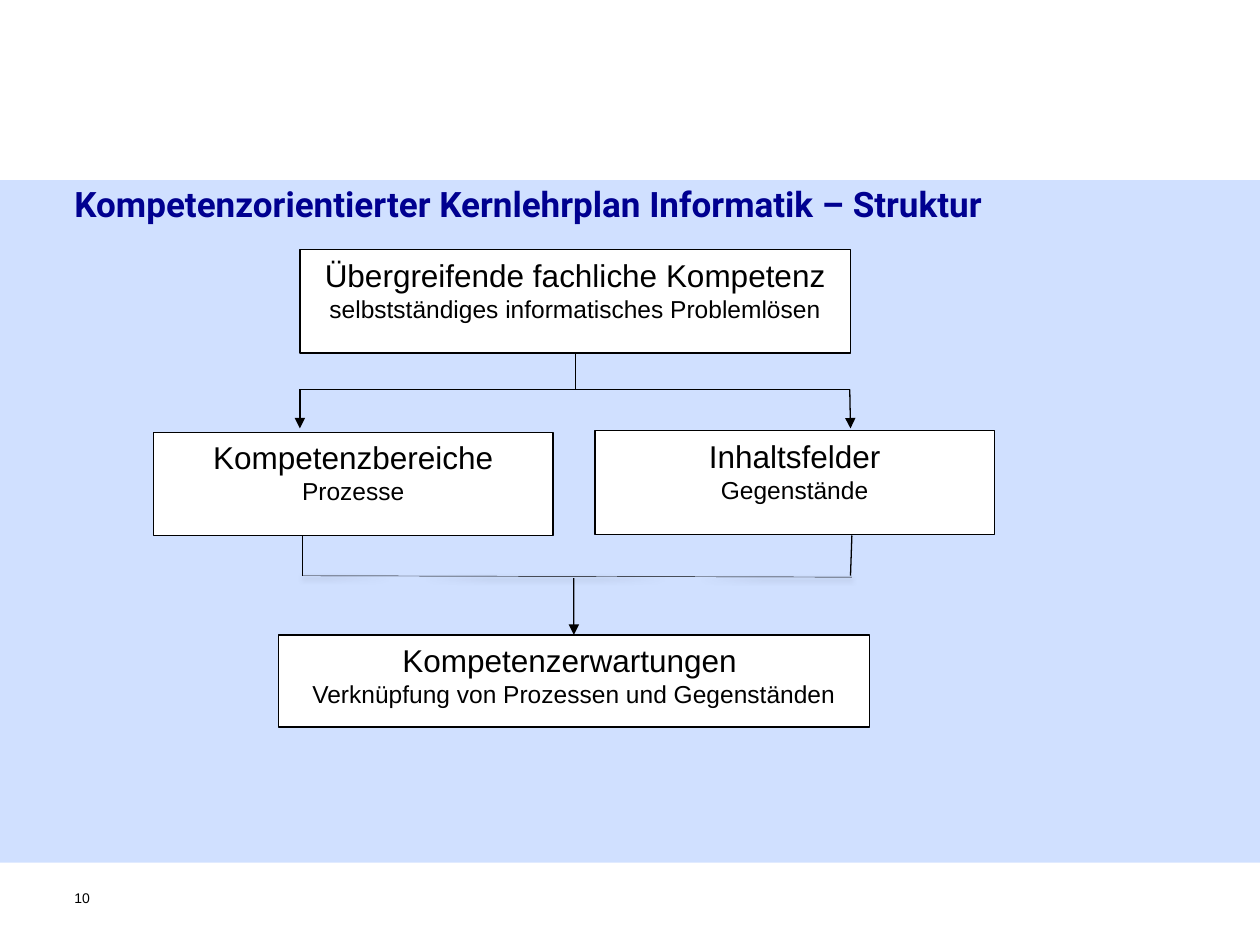
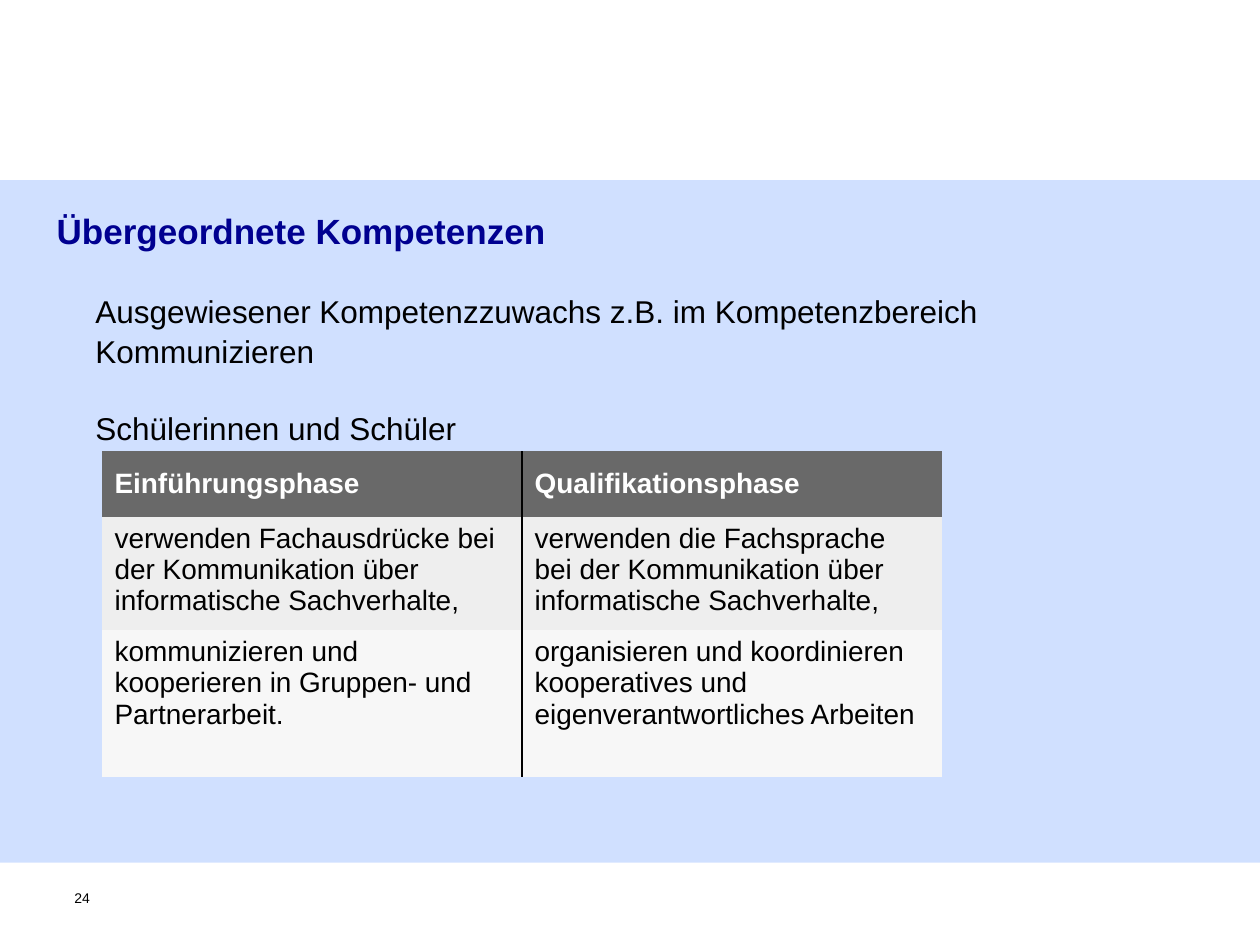
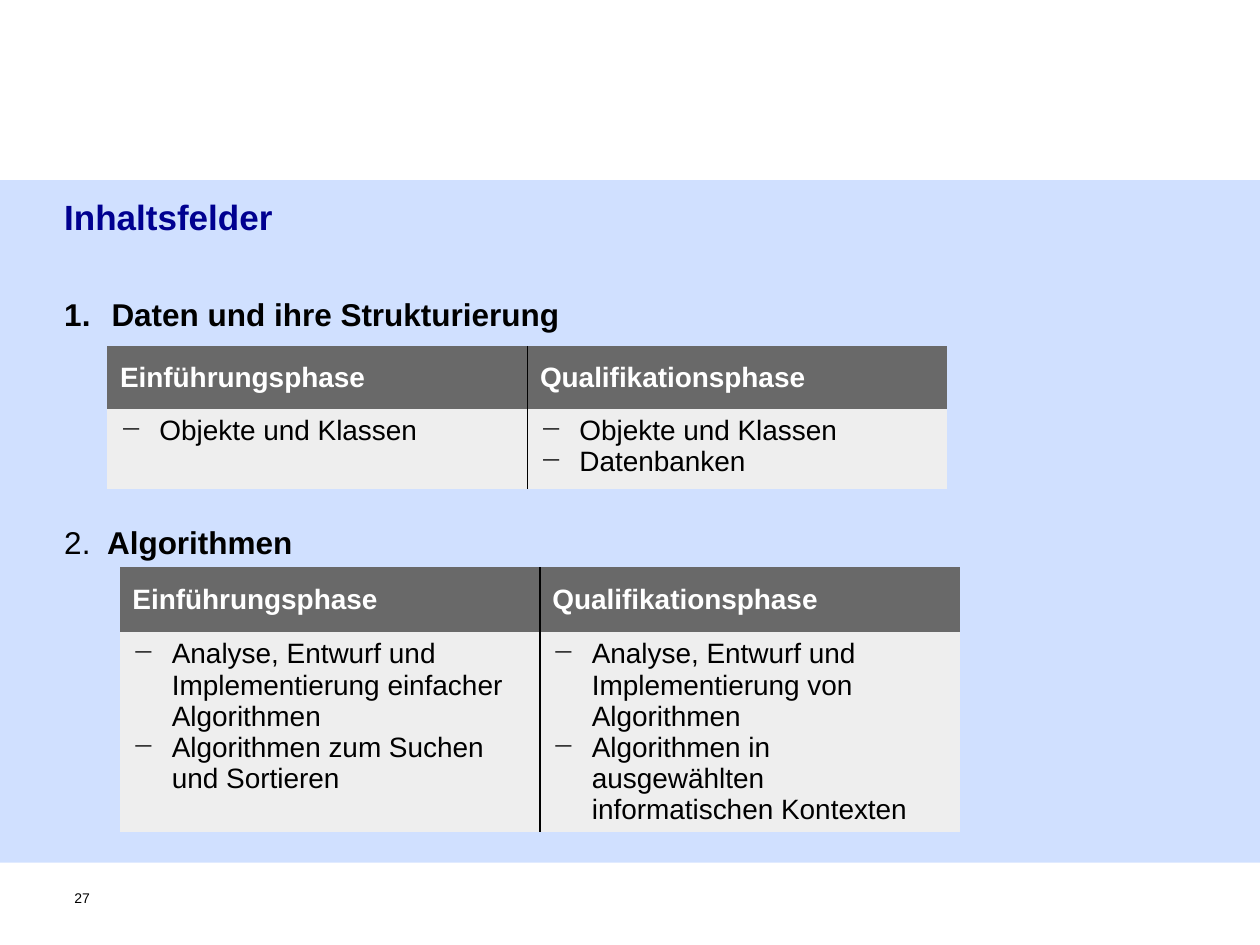
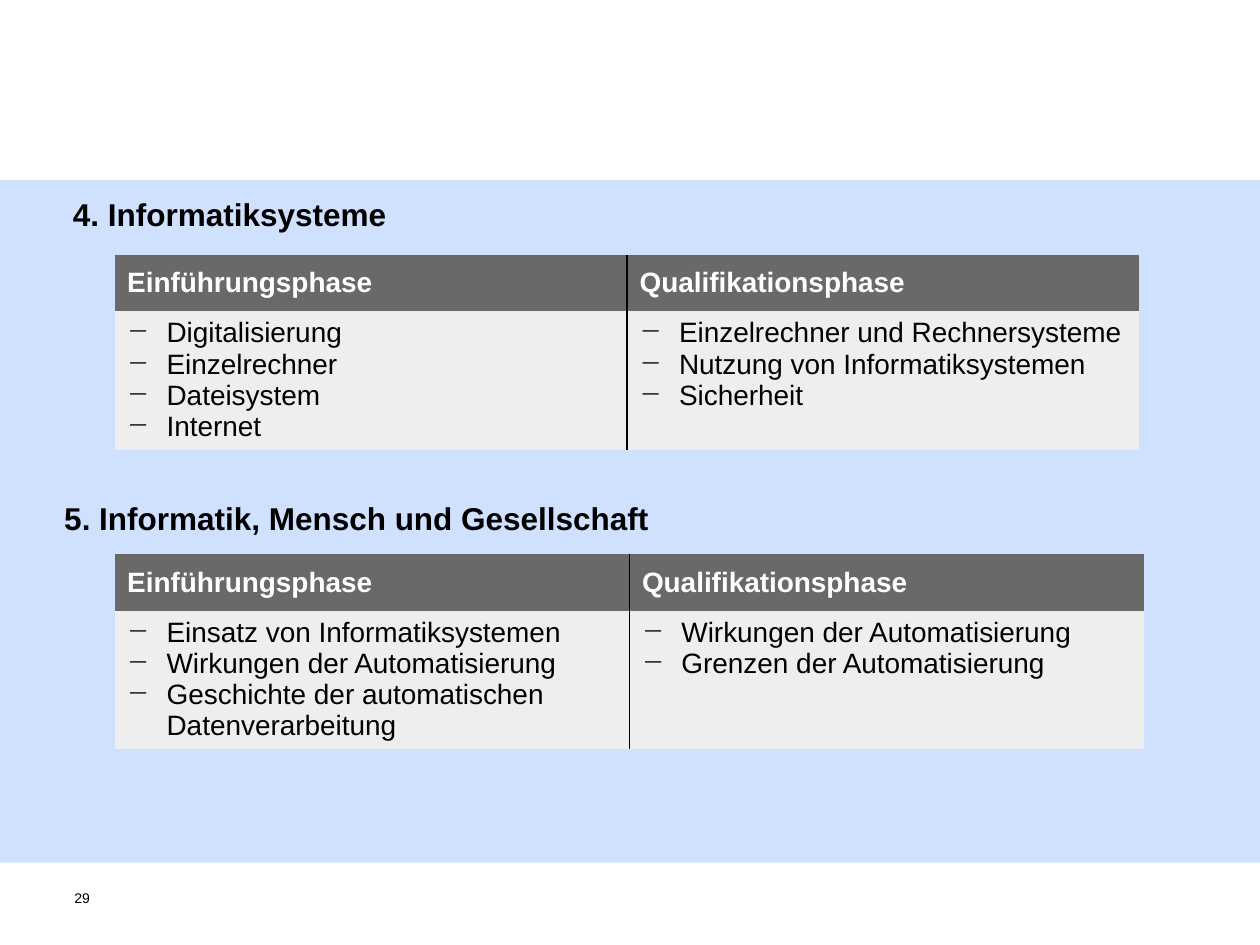
from dataclasses import dataclass

from lxml.etree import SubElement
from pptx import Presentation
from pptx.dml.color import RGBColor
from pptx.enum.shapes import MSO_CONNECTOR, MSO_SHAPE
from pptx.enum.text import MSO_ANCHOR, MSO_AUTO_SIZE, PP_ALIGN
from pptx.oxml.ns import qn
from pptx.util import Pt


@dataclass(frozen=True)
class Theme:
    font: str = "Arial"
    title_font: str = "Roboto"
    black: str = "000000"
    white: str = "FFFFFF"
    navy: str = "000090"
    band: str = "6699FF"
    header: str = "696969"
    rows: tuple = ("EEEEEE", "F7F7F7")
    title_size: int = 20
    heading_size: int = 18
    table_size: int = 16
    detail_size: int = 14
    number_size: int = 8
    line: float = 0.75
    hairline: float = 0.25
    divider: float = 1


THEME = Theme()
NO_STYLE = "{2D5ABB26-0587-4C30-8999-92F81FD0307C}"
BAND = (0, 103, 720, 390)
PHASES = ("Einführungsphase", "Qualifikationsphase")
DETAIL = {"size": THEME.detail_size}

BOXES = {
    "competence": ((171.4, 142.6, 314.6, 59.2), [
        {"runs": [("Übergreifende fachliche Kompetenz", {}), ("\n", {}),
                  ("selbstständiges informatisches Problemlösen", DETAIL)]}]),
    "processes": ((87.8, 247, 228.2, 59.2),
                  ["Kompetenzbereiche", {"runs": [("Prozesse", DETAIL)]}]),
    "subjects": ((340, 246.2, 228.2, 59.2),
                 ["Inhaltsfelder", {"runs": [("Gegenstände", DETAIL)]}]),
    "expectations": ((159.1, 362.8, 337.7, 52.6), [
        "Kompetenzerwartungen ",
        {"runs": [("Verknüpfung von Prozessen und Gegenständen", DETAIL)]}]),
}
CENTER, SPLIT, JOIN = 328.7, 222.5, 329
LEFT, RIGHT = 171.4, 485.6
LINKS = [
    {"start": (CENTER, 201.8), "end": (CENTER, SPLIT), "source": "competence"},
    {"start": (CENTER, SPLIT), "end": (LEFT, SPLIT)},
    {"start": (RIGHT, SPLIT), "end": (CENTER, SPLIT)},
    {"start": (LEFT, SPLIT), "end": (LEFT, 244.8), "arrow": True},
    {"start": (RIGHT, SPLIT), "end": (RIGHT + 0.4, 244.8), "arrow": True},
    {"start": (172.8, 306), "end": (172.8, JOIN)},
    {"start": (486.8, 306), "end": (486, JOIN)},
    {"start": (172.8, JOIN), "end": (486.8, JOIN + 0.8),
     "width": THEME.hairline, "shadow": True},
    {"start": (327.8, 330.4), "end": (328, 362.8), "arrow": True,
     "target": "expectations"},
]

SLIDES = [
    {
        "number": "10",
        "title": "Kompetenzorientierter Kernlehrplan Informatik – Struktur",
        "title_at": (42.5, 104.4, 635, 61.2),
        "title_format": {"font": THEME.title_font},
        "diagram": True,
    },
    {
        "number": "24",
        "title": "Übergeordnete Kompetenzen",
        "title_at": (32.4, 108, 635, 44.6),
        "title_format": {"inset": (0, 11.5, 0, 0)},
        "text_at": (47.5, 163.5, 592.6, 94.3),
        "text": [
            "Ausgewiesener Kompetenzzuwachs z.B. im Kompetenzbereich",
            {"text": "Kommunizieren", "before": 1},
            {"text": "Schülerinnen und Schüler", "before": 22.2},
        ],
        "text_format": {"inset": (7.2, 3.6, 7.2, 3.6)},
        "tables": [{
            "at": (58.3, 257.8), "column": 240, "heights": (37.4, 65, 84),
            "rows": [
                (["verwenden Fachausdrücke bei der Kommunikation über informatische Sachverhalte,"],
                 ["verwenden die Fachsprache bei der Kommunikation über informatische Sachverhalte,"]),
                (["kommunizieren und kooperieren in Gruppen- und Partnerarbeit."],
                 ["organisieren und koordinieren kooperatives und eigenverantwortliches Arbeiten"]),
            ],
        }],
    },
    {
        "number": "27",
        "title": "Inhaltsfelder",
        "title_at": (36.7, 100, 635, 44.6),
        "title_format": {"inset": (0, 11.5, 0, 0)},
        "text_at": (36.7, 168.5, 635, 322),
        "text": [
            {"text": "Daten und ihre Strukturierung", "bold": True,
             "numbered": True, "hang": 27},
            {"runs": [("2.\t", {}), ("Algorithmen", {"bold": True})],
             "before": 109, "hang": 24.5},
        ],
        "tables": [
            {"at": (61.4, 197.8), "column": 240, "heights": (36, 45.6), "bullet": "−",
             "rows": [(["Objekte und Klassen"],
                       ["Objekte und Klassen", "Datenbanken"])]},
            {"at": (68.5, 324), "column": 240, "heights": (37.4, 113.8), "bullet": "−",
             "rows": [(["Analyse, Entwurf und Implementierung einfacher Algorithmen",
                        "Algorithmen zum Suchen und Sortieren"],
                       ["Analyse, Entwurf und Implementierung von Algorithmen",
                        "Algorithmen in ausgewählten informatischen Kontexten"])]},
        ],
    },
    {
        "number": "29",
        "text_at": (36.7, 100, 635, 391),
        "text": [
            {"text": "4. Informatiksysteme", "left": 5},
            {"text": "5. Informatik, Mensch und Gesellschaft", "before": 152},
        ],
        "text_format": {"bold": True, "inset": (0, 11.5, 0, 0)},
        "tables": [
            {"at": (65.5, 316.7), "column": 294.2, "heights": (32.4, 79), "bullet": "−",
             "rows": [(["Einsatz von Informatiksystemen",
                        "Wirkungen der Automatisierung",
                        "Geschichte der automatischen Datenverarbeitung"],
                       ["Wirkungen der Automatisierung",
                        "Grenzen der Automatisierung"])]},
            {"at": (65.5, 145.6), "column": 292.8, "heights": (32.4, 79), "bullet": "−",
             "rows": [(["Digitalisierung", "Einzelrechner", "Dateisystem", "Internet"],
                       ["Einzelrechner und Rechnersysteme",
                        "Nutzung von Informatiksystemen", "Sicherheit"])]},
        ],
    },
]

FORMAT = {
    "size": THEME.heading_size, "color": THEME.black, "font": THEME.font,
    "bold": False, "align": PP_ALIGN.LEFT, "before": 0, "hang": 0, "left": 0,
    "bullet": None, "numbered": False,
}


def points(values):
    return [Pt(value) for value in values]


def rgb(color):
    return RGBColor.from_string(color)


def write(frame, lines, inset=None, **format):
    if inset is not None:
        frame.word_wrap = True
        frame.auto_size = MSO_AUTO_SIZE.NONE
        frame.vertical_anchor = MSO_ANCHOR.TOP
        (frame.margin_left, frame.margin_top,
         frame.margin_right, frame.margin_bottom) = points(inset)
    for index, line in enumerate(lines):
        line = {"text": line} if isinstance(line, str) else line
        style = {**FORMAT, **format, **line}
        paragraph = frame.add_paragraph() if index else frame.paragraphs[0]
        paragraph.alignment = style["align"]
        paragraph.space_before = Pt(style["before"])
        properties = paragraph._p.get_or_add_pPr()
        properties.set("marL", str(Pt(style["left"] + style["hang"])))
        properties.set("indent", str(-Pt(style["hang"])))
        if style["numbered"]:
            SubElement(properties, qn("a:buAutoNum"), type="arabicPeriod")
        elif style["bullet"]:
            SubElement(properties, qn("a:buChar"), char=style["bullet"])
        else:
            SubElement(properties, qn("a:buNone"))
        for text, override in line.get("runs") or [(line["text"], {})]:
            if text == "\n":
                paragraph.add_line_break()
                continue
            look = {**style, **override}
            run = paragraph.add_run()
            run.text = text
            run.font.name = look["font"]
            run.font.size = Pt(look["size"])
            run.font.bold = look["bold"]
            run.font.color.rgb = rgb(look["color"])


def add_rectangle(slide, at, fill, border=None):
    rectangle = slide.shapes.add_shape(MSO_SHAPE.RECTANGLE, *points(at))
    rectangle.shadow.inherit = False
    rectangle.fill.solid()
    rectangle.fill.fore_color.rgb = rgb(fill)
    if border:
        rectangle.line.color.rgb = rgb(border)
        rectangle.line.width = Pt(THEME.line)
    else:
        rectangle.line.fill.background()
    return rectangle


def add_master_band(deck, slide):
    band = add_rectangle(slide, BAND, THEME.band).element
    SubElement(band.find(".//" + qn("a:srgbClr")), qn("a:alpha"), val="30000")
    deck.slide_master.shapes.element.insert(2, band)


def add_link(slide, boxes, start, end, source=None, target=None,
             arrow=False, width=THEME.line, shadow=False):
    link = slide.shapes.add_connector(MSO_CONNECTOR.STRAIGHT, *points(start + end))
    if source:
        link.begin_connect(boxes[source], 2)
    if target:
        link.end_connect(boxes[target], 0)
    link.line.color.rgb = rgb(THEME.black)
    link.line.width = Pt(width)
    if arrow:
        SubElement(link.line._get_or_add_ln(), qn("a:tailEnd"), type="triangle")
    effects = SubElement(link.element.spPr, qn("a:effectLst"))
    if shadow:
        cast = SubElement(effects, qn("a:outerShdw"), blurRad=str(Pt(3.1)),
                          dist=str(Pt(1.6)), dir="5400000", rotWithShape="0")
        color = SubElement(cast, qn("a:srgbClr"), val=THEME.black)
        SubElement(color, qn("a:alpha"), val="38000")


def add_diagram(slide):
    boxes = {}
    for key, (at, lines) in BOXES.items():
        boxes[key] = add_rectangle(slide, at, THEME.white, THEME.black)
        write(boxes[key].text_frame, lines, inset=(7.2, 3.6, 7.2, 3.6),
              align=PP_ALIGN.CENTER)
    for link in LINKS:
        add_link(slide, boxes, **link)


def add_divider(cell, side):
    border = SubElement(cell._tc.get_or_add_tcPr(), qn("a:" + side),
                        w=str(Pt(THEME.divider)))
    fill = SubElement(border, qn("a:solidFill"))
    SubElement(fill, qn("a:srgbClr"), val=THEME.black)


def add_phases(slide, at, column, heights, rows, bullet=None):
    frame = slide.shapes.add_table(
        len(heights), len(PHASES),
        *points(at + (column * len(PHASES), sum(heights))))
    frame.element.find(".//" + qn("a:tableStyleId")).text = NO_STYLE
    table = frame.table
    table.horz_banding = False
    for phase in table.columns:
        phase.width = Pt(column)
    content = [[[phase] for phase in PHASES], *rows]
    for row, (height, entries) in enumerate(zip(heights, content)):
        table.rows[row].height = Pt(height)
        for col, lines in enumerate(entries):
            cell = table.cell(row, col)
            add_divider(cell, ("lnR", "lnL")[col])
            cell.fill.solid()
            if row == 0:
                cell.fill.fore_color.rgb = rgb(THEME.header)
                cell.vertical_anchor = MSO_ANCHOR.MIDDLE
                write(cell.text_frame, lines, size=THEME.table_size,
                      color=THEME.white, bold=True)
            else:
                cell.fill.fore_color.rgb = rgb(THEME.rows[row - 1])
                write(cell.text_frame, lines, size=THEME.table_size,
                      bullet=bullet, hang=22.5 if bullet else 0)


def add_text(slide, at, lines, **format):
    box = slide.shapes.add_textbox(*points(at))
    write(box.text_frame, lines, **{"inset": (0, 0, 0, 0), **format})


def add_title(slide, text, at, **format):
    title = slide.shapes.title
    title.left, title.top, title.width, title.height = points(at)
    write(title.text_frame, [text], **{
        "inset": (0, 0, 0, 0), "size": THEME.title_size,
        "color": THEME.navy, "bold": True, **format})


def main():
    deck = Presentation()
    deck.slide_width, deck.slide_height = points((720, 540))
    title_only, blank = deck.slide_layouts[5], deck.slide_layouts[6]
    for index, content in enumerate(SLIDES):
        slide = deck.slides.add_slide(title_only if "title" in content else blank)
        if index == 0:
            add_master_band(deck, slide)
        if "title" in content:
            add_title(slide, content["title"], content["title_at"],
                      **content["title_format"])
        if "text" in content:
            add_text(slide, content["text_at"], content["text"],
                     **content.get("text_format", {}))
        if content.get("diagram"):
            add_diagram(slide)
        for phases in content.get("tables", []):
            add_phases(slide, **phases)
        add_text(slide, (42.5, 508.3, 23, 26.6), [content["number"]],
                 size=THEME.number_size)
    deck.save("out.pptx")


if __name__ == "__main__":
    main()
